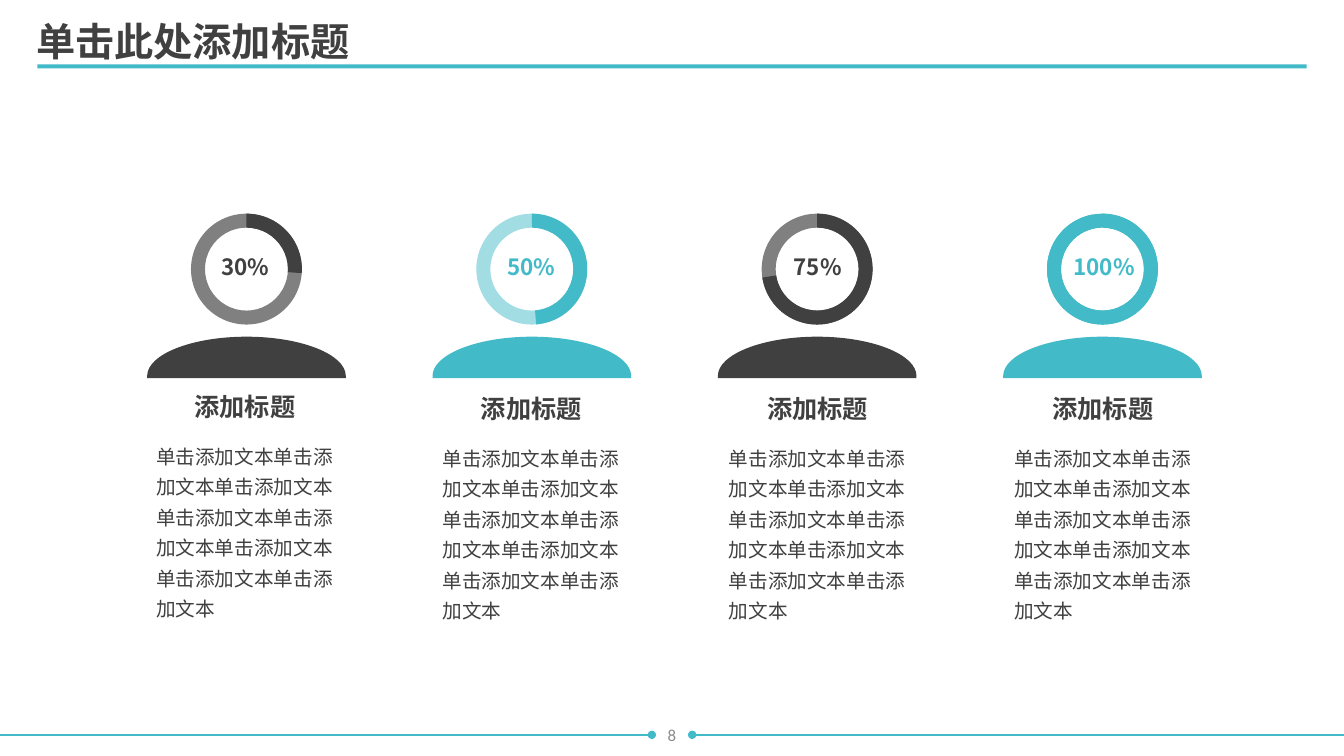
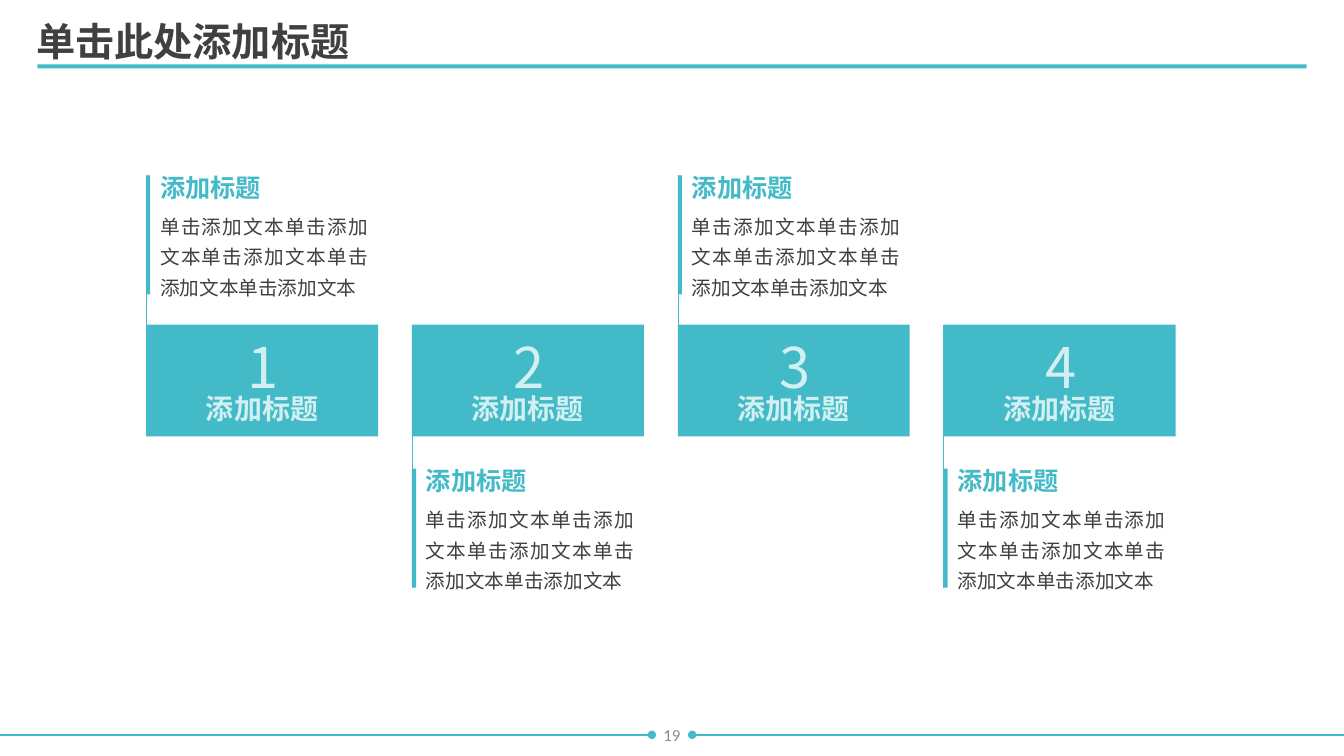
from dataclasses import dataclass

from lxml import etree
from pptx import Presentation
from pptx import util as u
from pptx.dml.color import RGBColor
from pptx.enum import shapes, text
from pptx.oxml.ns import qn


@dataclass(frozen=True)
class Theme:
    teal: str = "42BAC8"
    pale_teal: str = "A1DDE3"
    ice: str = "D2EFF2"
    dark: str = "404040"
    grey: str = "808080"
    footer_grey: str = "8C8C8C"
    font: str = "Noto Sans CJK SC"
    footer_font: str = "Calibri"
    title: int = 28
    number: int = 40
    card: int = 20
    heading: int = 18
    percent: int = 16
    body: int = 14
    footer: int = 12


theme = Theme()
LEFT, CENTER, JUSTIFY = text.PP_ALIGN.LEFT, text.PP_ALIGN.CENTER, text.PP_ALIGN.JUSTIFY
KIND = shapes.MSO_SHAPE
WIDTH, HEIGHT = 13.33, 7.5
HEADING, PHRASE = "添加标题", "单击添加文本"


def add_text(page, words, area, size, color, align=LEFT, bold=False, spacing=0.9,
             wrap=True, font=theme.font):
    box = page.shapes.add_textbox(*map(u.Inches, area))
    frame_format = {"word_wrap": wrap, "auto_size": text.MSO_AUTO_SIZE.SHAPE_TO_FIT_TEXT}
    for name, value in frame_format.items():
        setattr(box.text_frame, name, value)
    para = box.text_frame.paragraphs[0]
    para.alignment, para.line_spacing = align, spacing
    span = para.add_run()
    span.text = words
    for name, value in {"size": u.Pt(size), "bold": bold, "name": font}.items():
        setattr(span.font, name, value)
    span.font.color.rgb = RGBColor.from_string(color)
    # East Asian glyphs take their own typeface element
    etree.SubElement(span._r.get_or_add_rPr(), qn("a:ea"), typeface=font)
    return box


def paint(shape, color, line=None):
    """Fill a shape, or stroke a connector when a line width is given."""
    if line is None:
        shape.shadow.inherit = False
        shape.fill.solid()
        shape.fill.fore_color.rgb = RGBColor.from_string(color)
        shape.line.fill.background()
    else:
        shape.line.width = u.Pt(line)
        shape.line.color.rgb = RGBColor.from_string(color)
        etree.SubElement(shape.element.spPr, qn("a:effectLst"))
    return shape


deck = Presentation()
deck.slide_width, deck.slide_height = u.Inches(WIDTH), u.Inches(HEIGHT)
blank = deck.slide_layouts[6]
people, steps = [deck.slides.add_slide(blank) for _ in range(2)]

# Shared layout: rule under the title and two footer lines with round ends
margin, footer_y, footer_gap = 0.37, 7.29, 0.2
rule = people.shapes.add_shape(KIND.RECTANGLE, *map(
    u.Inches, (margin, 0.64, WIDTH - 2 * margin, 0.04)))
shared = [paint(rule, theme.teal)]
for edge, side in ((0, -1), (WIDTH, 1)):
    line = people.shapes.add_connector(shapes.MSO_CONNECTOR.STRAIGHT, *map(
        u.Inches, (edge, footer_y, WIDTH / 2 + side * footer_gap, footer_y)))
    shared.append(paint(line, theme.teal, line=1))
    etree.SubElement(line.line._get_or_add_ln(), qn("a:tailEnd"), type="oval")
for shape in shared:
    blank.shapes.element.append(shape.element)

# Title and page number
for page, number in ((people, "8"), (steps, "19")):
    add_text(page, "单击此处添加标题", (0.26, 0.18, 7.56, 0.52), theme.title, theme.dark, bold=True)
    footer = add_text(page, number, (WIDTH / 2 - 1.5, 7.09, 3, 0.4), theme.footer,
                      theme.footer_grey, CENTER, spacing=1, font=theme.footer_font)
    footer.text_frame.auto_size = text.MSO_AUTO_SIZE.NONE
    footer.text_frame.vertical_anchor = text.MSO_ANCHOR.MIDDLE

# People: a ring for the head, a half ellipse for the shoulders, text below
first, pitch, figure = 1.46, 2.83, 1.97
ring, ring_top, thickness, full_turn = 1.1, 2.12, 0.126, 359.99
shoulder_top, shoulder_y, shoulder_base = 3.34, 3.73, 3.75
bend = 0.55  # control point share that rounds a quarter ellipse
figures = [
    ("30%", 0.68, 94.2, theme.dark, theme.grey, 1.45, 3.87),
    ("50%", 0.68, 175.5, theme.teal, theme.pale_teal, 4.29, 3.89),
    ("75%", 0.68, 261.2, theme.dark, theme.grey, 7.13, 3.89),
    ("100%", 0.82, 350, theme.teal, theme.teal, 9.96, 3.89),
]
for column, (percent, label, sweep, color, rest, text_left, text_top) in enumerate(figures):
    left = first + column * pitch
    middle, right = left + figure / 2, left + figure
    for turn, tint in ((full_turn, rest), (sweep, color)):
        arc = people.shapes.add_shape(KIND.BLOCK_ARC, *map(
            u.Inches, (middle - ring / 2, ring_top, ring, ring)))
        paint(arc, tint)
        # Angles run clockwise from three o'clock, 0.6 units to the degree
        for index, value in enumerate((270 * 0.6, (270 + turn) % 360 * 0.6, thickness)):
            arc.adjustments[index] = value

    outline = [(left, shoulder_base), (left, shoulder_y), (middle, shoulder_top),
               (right, shoulder_y), (right, shoulder_base)]
    points = [(u.Inches(x), u.Inches(y)) for x, y in outline]
    builder = people.shapes.build_freeform(*points[0])
    builder.add_line_segments(points[1:], close=True)
    shoulders = paint(builder.convert_to_shape(), color)
    # Bend the two sloping sides into quarter ellipses
    rise, reach = (shoulder_y - shoulder_top) * bend, figure / 2 * bend
    controls = [((left, shoulder_y - rise), (middle - reach, shoulder_top)),
                ((middle + reach, shoulder_top), (right, shoulder_y - rise))]
    sides = list(shoulders.element.iter(qn("a:lnTo")))[1:3]
    for side, pair in zip(sides, controls):
        side.tag = qn("a:cubicBezTo")
        for index, (x, y) in enumerate(pair):
            control = etree.Element(qn("a:pt"), x=str(u.Inches(x - left)),
                                    y=str(u.Inches(y - shoulder_top)))
            side.insert(index, control)

    add_text(people, percent, (2.43 + column * 2.84 - label / 2, 2.49, label, 0.34),
             theme.percent, color, CENTER, bold=True, wrap=False)
    add_text(people, HEADING, (text_left, text_top, 1.96, 0.37), theme.heading, theme.dark,
             CENTER, bold=True)
    add_text(people, PHRASE * 8, (text_left, text_top + 0.42, 1.96, 1.92), theme.body,
             theme.dark, spacing=1.3)

# Steps: a row of cards, with notes above and below by turns
first, last, count = 1.45, 11.66, 4
card, card_top, card_height = 2.3, 3.22, 1.11
pitch = (last - first - card) / (count - 1)
note_height = 1.18
for column in range(count):
    left = first + column * pitch
    above = column % 2 == 0
    note_top = 1.74 if above else 4.65
    stem = (note_top, card_top + card_height) if above else (note_top + note_height, card_top)
    line = steps.shapes.add_connector(shapes.MSO_CONNECTOR.STRAIGHT, *map(
        u.Inches, (left, stem[0], left, stem[1])))
    paint(line, theme.teal, line=0.5)
    for area in ((left, note_top, 0.04, note_height), (left, card_top, card, card_height)):
        paint(steps.shapes.add_shape(KIND.RECTANGLE, *map(u.Inches, area)), theme.teal)

    add_text(steps, HEADING, (left + 0.04, note_top - 0.05, 2.26, 0.37), theme.heading,
             theme.teal, JUSTIFY, bold=True)
    add_text(steps, PHRASE * 5, (left + 0.04, note_top + 0.27, 2.26, 1.01), theme.body,
             theme.dark, JUSTIFY, spacing=1.3)
    add_text(steps, HEADING, (left + 0.1, 3.87, 2.1, 0.4), theme.card, theme.ice,
             CENTER, bold=True)
    add_text(steps, str(column + 1), (left + 0.57, 3.33, 1.18, 0.7), theme.number,
             theme.ice, CENTER)

deck.save("out.pptx")
